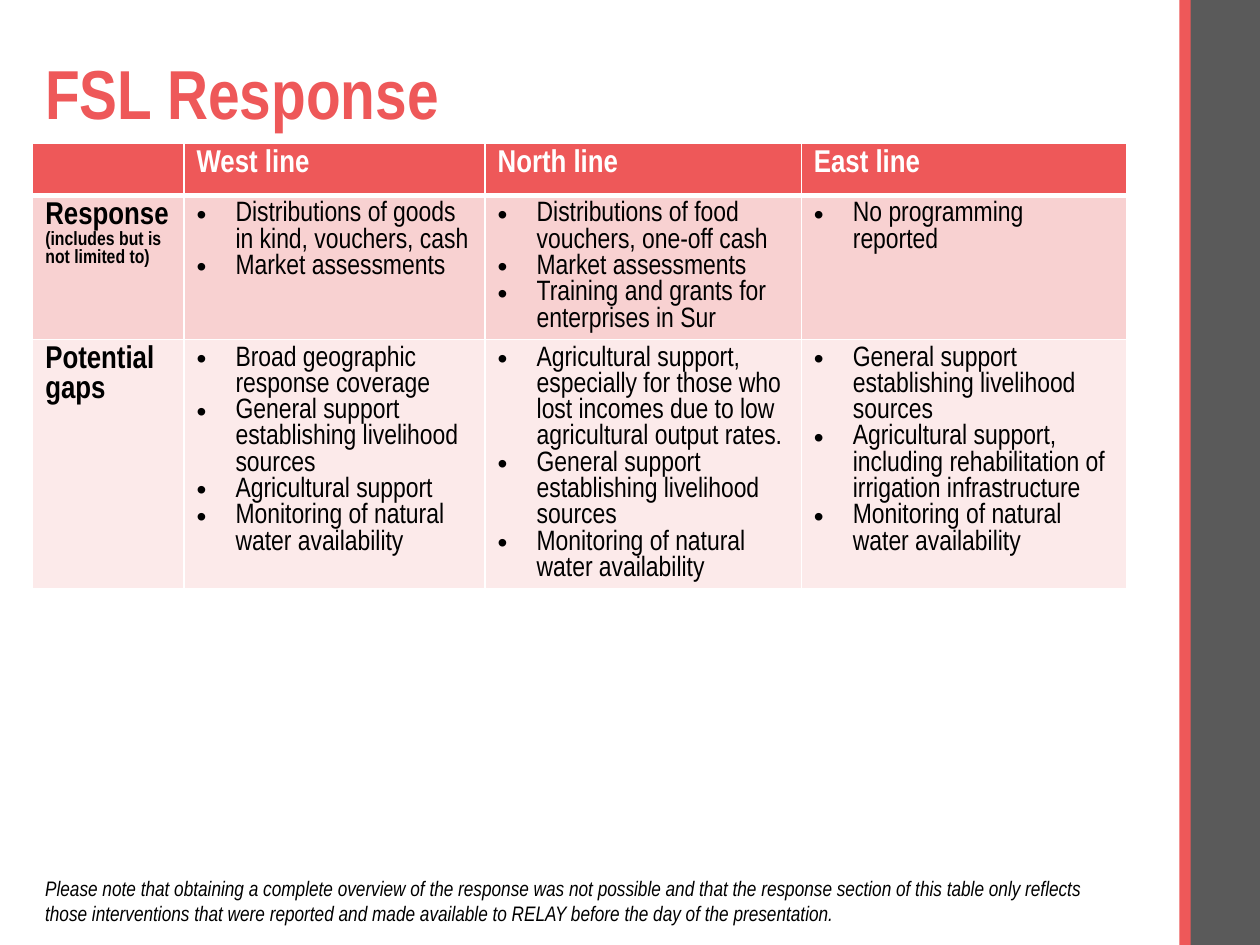
from dataclasses import dataclass

from lxml import etree
from pptx import Presentation
from pptx.dml.color import RGBColor
from pptx.enum.shapes import MSO_SHAPE
from pptx.enum.text import MSO_ANCHOR, MSO_AUTO_SIZE, PP_ALIGN
from pptx.oxml.ns import qn
from pptx.slide import Slide
from pptx.table import Table, _Cell
from pptx.text.text import _Paragraph
from pptx.util import Inches, Pt

RECTANGLE = MSO_SHAPE.RECTANGLE
MIDDLE = MSO_ANCHOR.MIDDLE
NO_FIT, GROW = MSO_AUTO_SIZE.NONE, MSO_AUTO_SIZE.SHAPE_TO_FIT_TEXT
LEFT = PP_ALIGN.LEFT


@dataclass(frozen=True)
class Theme:
    font: str = "Arial Narrow"
    red: str = "EE5859"
    grey: str = "5A5A5A"
    white: str = "FFFFFF"
    black: str = "000000"
    title: float = 39.6
    heading: float = 18
    bullet: float = 16
    note: float = 12
    remark: float = 11


@dataclass(frozen=True)
class Bar:
    left: float
    width: float
    color: str


@dataclass(frozen=True)
class ResponseRow:
    label: str
    remark: str
    fill: str
    bullets: tuple[tuple[str, ...], ...]


THEME = Theme()
CONTENT_LEFT, CONTENT_WIDTH = 0.26, 8.69
BULLET_INDENT = 0.31
COLUMN_WIDTHS = (1.2, 2.39, 2.51, 2.58)
ROW_HEIGHT = 0.41

BARS = (Bar(9.43, 0.57, THEME.grey), Bar(9.36, 0.09, THEME.red))
HEADINGS = ("", "West line", "North line", "East line")
LIVELIHOODS = "General support establishing livelihood sources"
WATER = "Monitoring of natural water availability"
ROWS = (
    ResponseRow("Response", "(includes but is not limited to)", "F8D1D1", (
        ("Distributions of goods in kind, vouchers, cash", "Market assessments"),
        ("Distributions of food vouchers, one-off cash", "Market assessments",
         "Training and grants for enterprises in Sur"),
        ("No programming reported",),
    )),
    ResponseRow("Potential gaps", "", "FCEAEA", (
        ("Broad geographic response coverage", LIVELIHOODS,
         "Agricultural support", WATER),
        ("Agricultural support, especially for those who lost incomes "
         "due to low agricultural output rates.", LIVELIHOODS, WATER),
        (LIVELIHOODS, "Agricultural support, including rehabilitation of "
         "irrigation infrastructure", WATER),
    )),
)
NOTE = (
    "Please note that obtaining a complete overview of the response was not "
    "possible and that the response section of this table only reflects those "
    "interventions that were reported and made available to RELAY before the "
    "day of the presentation."
)


def add_run(paragraph: _Paragraph, text: str, size: float, color: str,
            bold: bool = False, italic: bool = False) -> None:
    run = paragraph.add_run()
    run.text = text
    run.font.name = THEME.font
    run.font.size = Pt(size)
    run.font.bold = bold
    run.font.italic = italic
    run.font.color.rgb = RGBColor.from_string(color)


def add_bar(slide: Slide, bar: Bar) -> None:
    shape = slide.shapes.add_shape(
        RECTANGLE, Inches(bar.left), 0, Inches(bar.width), Inches(7.5))
    shape.shadow.inherit = False
    shape.fill.solid()
    shape.fill.fore_color.rgb = RGBColor.from_string(bar.color)
    shape.line.fill.background()


def format_title(slide: Slide, text: str) -> None:
    title = slide.shapes.title
    title.left, title.top = Inches(CONTENT_LEFT), Inches(0.4)
    title.width, title.height = Inches(CONTENT_WIDTH), Inches(0.74)
    frame = title.text_frame
    frame.auto_size = NO_FIT
    frame.vertical_anchor = MIDDLE
    paragraph = frame.paragraphs[0]
    paragraph.alignment = LEFT
    paragraph.line_spacing = 0.9
    add_run(paragraph, text, THEME.title, THEME.red, bold=True)


def style_cell(cell: _Cell, fill: str, top: float = 1, bottom: float = 1) -> None:
    """Set white borders, with widths in points, and then the fill."""
    properties = cell._tc.get_or_add_tcPr()
    for side, width in (("L", 1), ("R", 1), ("T", top), ("B", bottom)):
        line = etree.SubElement(properties, qn(f"a:ln{side}"), w=str(Pt(width)))
        solid = etree.SubElement(line, qn("a:solidFill"))
        etree.SubElement(solid, qn("a:srgbClr"), val=THEME.white)
    cell.fill.solid()
    cell.fill.fore_color.rgb = RGBColor.from_string(fill)


def add_bullets(cell: _Cell, items: tuple[str, ...]) -> None:
    frame = cell.text_frame
    for index, item in enumerate(items):
        paragraph = frame.add_paragraph() if index else frame.paragraphs[0]
        properties = paragraph._p.get_or_add_pPr()
        properties.set("marL", str(Inches(BULLET_INDENT)))
        properties.set("indent", str(-Inches(BULLET_INDENT)))
        etree.SubElement(properties, qn("a:buFont"), typeface="Arial")
        etree.SubElement(properties, qn("a:buChar"), char="•")
        add_run(paragraph, item, THEME.bullet, THEME.black)


def fill_header(table: Table) -> None:
    for column, heading in enumerate(HEADINGS):
        cell = table.cell(0, column)
        style_cell(cell, THEME.red, bottom=3)
        if heading:
            add_run(cell.text_frame.paragraphs[0], heading,
                    THEME.heading, THEME.white, bold=True)


def fill_row(table: Table, index: int, row: ResponseRow) -> None:
    top = 3 if index == 1 else 1
    label = table.cell(index, 0)
    style_cell(label, row.fill, top)
    add_run(label.text_frame.paragraphs[0], row.label,
            THEME.heading, THEME.black, bold=True)
    if row.remark:
        add_run(label.text_frame.add_paragraph(), row.remark,
                THEME.remark, THEME.black, bold=True)
    for column, items in enumerate(row.bullets, start=1):
        cell = table.cell(index, column)
        style_cell(cell, row.fill, top)
        add_bullets(cell, items)


def add_response_table(slide: Slide) -> None:
    """Add the table; its rows grow with their text."""
    frame = slide.shapes.add_table(
        len(ROWS) + 1, len(HEADINGS), Inches(CONTENT_LEFT), Inches(1.14),
        Inches(CONTENT_WIDTH), Inches(4.34))
    table = frame.table
    for column, width in zip(table.columns, COLUMN_WIDTHS):
        column.width = Inches(width)
    for row in table.rows:
        row.height = Inches(ROW_HEIGHT)
    frame.height = Inches(4.34)
    fill_header(table)
    for index, row in enumerate(ROWS, start=1):
        fill_row(table, index, row)


def add_note(slide: Slide) -> None:
    box = slide.shapes.add_textbox(
        Inches(CONTENT_LEFT), Inches(6.9), Inches(CONTENT_WIDTH), Inches(0.5))
    box.text_frame.word_wrap = True
    box.text_frame.auto_size = GROW
    add_run(box.text_frame.paragraphs[0], NOTE, THEME.note, THEME.black, italic=True)


def main() -> None:
    presentation = Presentation()
    presentation.slide_width, presentation.slide_height = Inches(10), Inches(7.5)
    slide = presentation.slides.add_slide(presentation.slide_layouts[5])
    for bar in BARS:
        add_bar(slide, bar)
    format_title(slide, "FSL Response")
    add_response_table(slide)
    add_note(slide)
    presentation.save("out.pptx")


if __name__ == "__main__":
    main()
